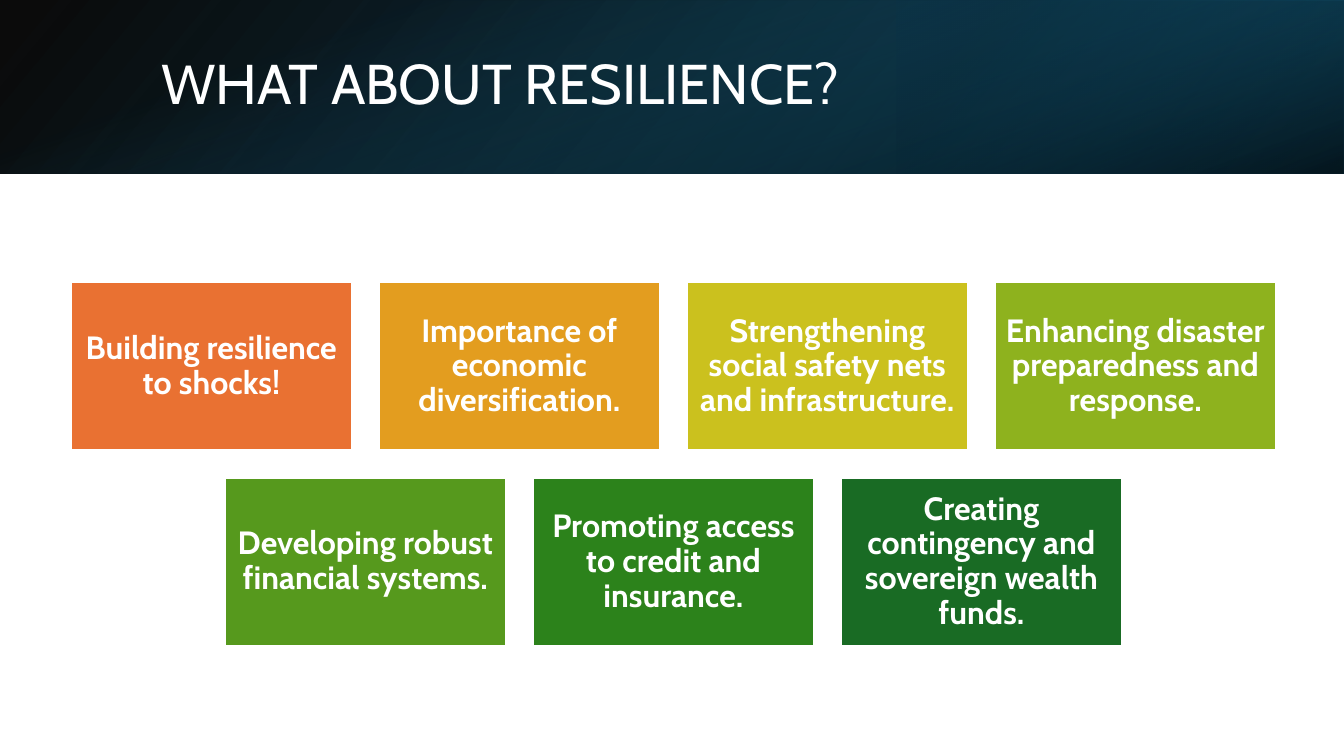
from dataclasses import dataclass

from lxml.etree import SubElement
from pptx import Presentation
from pptx.dml.color import RGBColor
from pptx.enum.shapes import MSO_SHAPE
from pptx.enum.text import MSO_ANCHOR, PP_ALIGN
from pptx.oxml.ns import qn
from pptx.util import Inches, Pt


@dataclass(frozen=True)
class Theme:
    font: str = "Cabin"
    title_size: int = 40
    card_size: int = 23
    white: str = "FFFFFF"
    black: str = "000000"
    deep_teal: str = "104862"
    dark_teal: str = "0B3041"
    teal: str = "156082"
    cards: tuple = ("E97132", "E39D1F", "CBC11E", "8EB21E", "56991D", "2C821B", "196B24")


theme = Theme()


def add_rectangle(left, top, width, height):
    shape = slide.shapes.add_shape(
        MSO_SHAPE.RECTANGLE, Inches(left), Inches(top), Inches(width), Inches(height))
    shape.shadow.inherit = False
    return shape


def write_text(shape, text, size, bold, alignment):
    frame = shape.text_frame
    frame.word_wrap = True
    frame.vertical_anchor = MSO_ANCHOR.MIDDLE
    paragraph = frame.paragraphs[0]
    paragraph.text = text
    paragraph.alignment = alignment
    paragraph.line_spacing = 0.9
    paragraph.font.name = theme.font
    paragraph.font.size = Pt(size)
    paragraph.font.bold = bold
    paragraph.font.color.rgb = RGBColor.from_string(theme.white)


presentation = Presentation()
presentation.slide_width = Inches(13.33)
presentation.slide_height = Inches(7.5)
slide = presentation.slides.add_slide(presentation.slide_layouts[6])

# Header band: three gradient layers
# (frame, rotation, flipped, clockwise angle, stops of position, colour, opacity in %)
header_layers = [
    ((0, 0, 13.33, 1.72), 0, True, 140,
     [(0, theme.black, 96), (100, theme.deep_teal, 100)]),
    ((8.89, 0, 4.44, 1.72), 180, True, 320,
     [(19, theme.dark_teal, 68), (100, theme.teal, 79)]),
    ((5.8, -5.8, 1.72, 13.33), 90, False, 340,
     [(23, theme.teal, 0), (99, theme.black, 74)]),
]
for frame, rotation, flipped, angle, stops in header_layers:
    layer = add_rectangle(*frame)
    layer.rotation = rotation
    if flipped:
        layer._element.spPr.find(qn("a:xfrm")).set("flipH", "1")
    layer.line.fill.background()
    layer.fill.gradient()
    layer.fill.gradient_angle = 360 - angle
    for gradient_stop, (position, color, _) in zip(layer.fill.gradient_stops, stops):
        gradient_stop.position = position / 100
        gradient_stop.color.rgb = RGBColor.from_string(color)
    # Opacity of each stop
    stop_colors = layer._element.spPr.iter(qn("a:srgbClr"))
    for stop_color, (_, _, opacity) in zip(stop_colors, stops):
        SubElement(stop_color, qn("a:alpha")).set("val", str(opacity * 1000))

# Title
title = slide.shapes.add_textbox(Inches(1.5), Inches(0.38), Inches(10.98), Inches(0.96))
write_text(title, "WHAT ABOUT RESILIENCE?", theme.title_size, False, PP_ALIGN.LEFT)

# Cards: two rows centred on the same axis
card_rows = [
    ["Building resilience to shocks!",
     "Importance of economic diversification.",
     "Strengthening social safety nets and infrastructure.",
     "Enhancing disaster preparedness and response."],
    ["Developing robust financial systems.",
     "Promoting access to credit and insurance.",
     "Creating contingency and sovereign wealth funds."],
]
card_width, card_height = 2.78, 1.67
column_step, row_step = 3.055, 1.94
center, first_top = 6.68, 2.8
card_colors = iter(theme.cards)

for row, texts in enumerate(card_rows):
    row_left = center - ((len(texts) - 1) * column_step + card_width) / 2
    for column, text in enumerate(texts):
        card = add_rectangle(row_left + column * column_step, first_top + row * row_step,
                             card_width, card_height)
        card.fill.solid()
        card.fill.fore_color.rgb = RGBColor.from_string(next(card_colors))
        card.line.color.rgb = RGBColor.from_string(theme.white)
        card.line.width = Pt(1.5)
        card.text_frame.margin_top = card.text_frame.margin_bottom = Inches(0.1)
        write_text(card, text, theme.card_size, True, PP_ALIGN.CENTER)

presentation.save("out.pptx")
